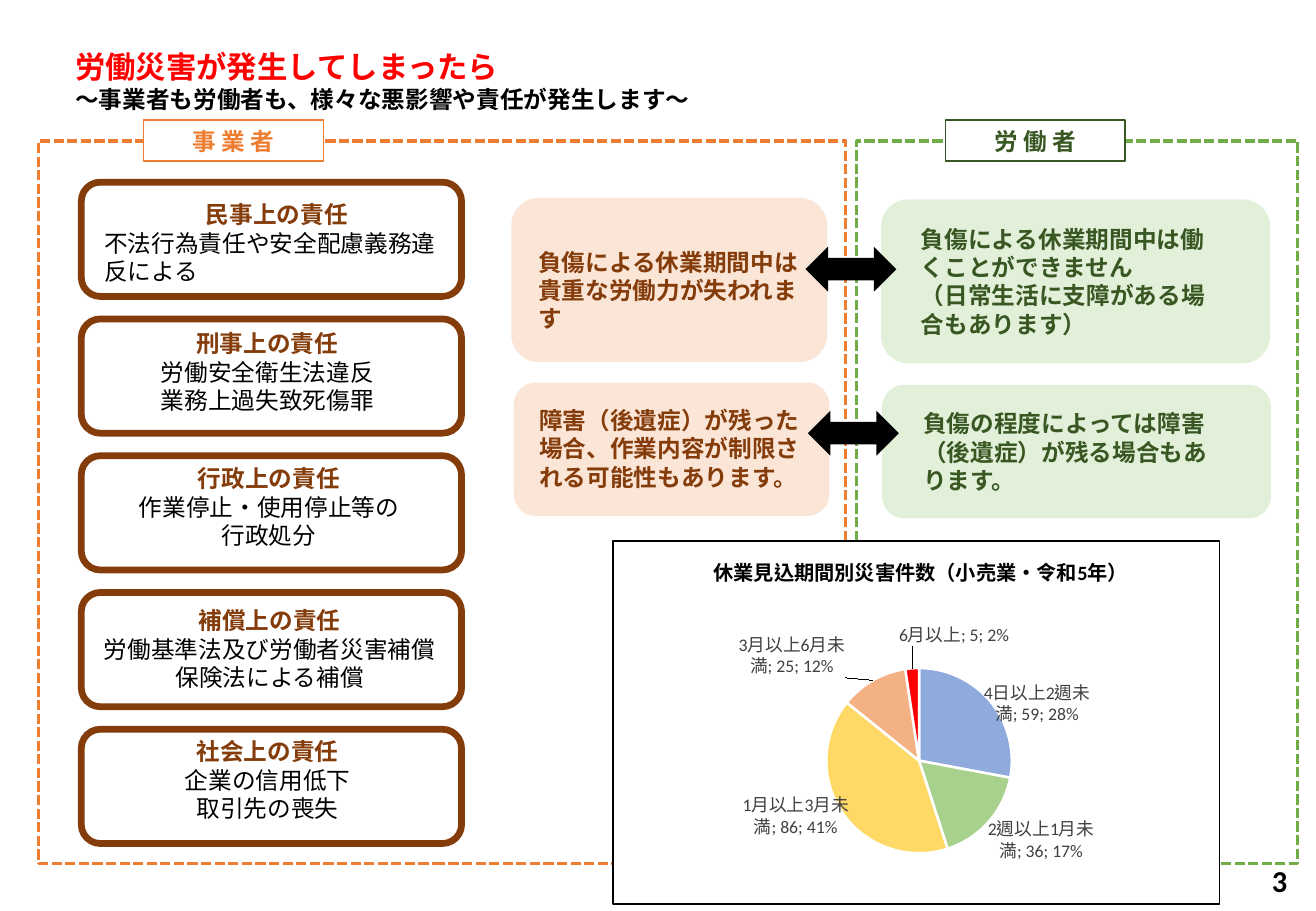
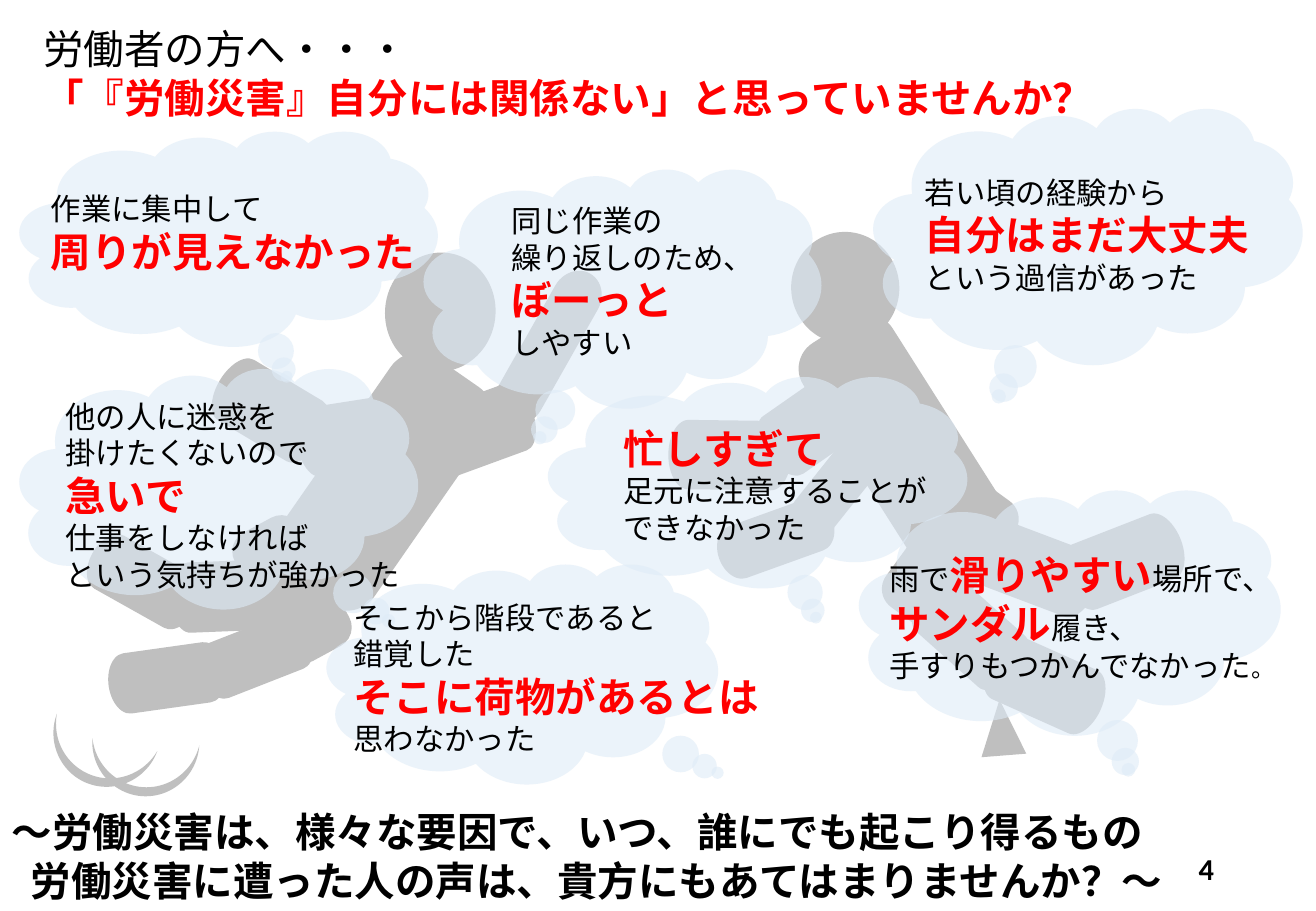
import lxml.etree
import pptx
import pptx.chart.data
import pptx.dml.color
import pptx.enum.chart
import pptx.enum.dml
import pptx.enum.shapes
import pptx.enum.text
import pptx.oxml
import pptx.oxml.ns
import pptx.util

Cm, Pt, RGB = pptx.util.Cm, pptx.util.Pt, pptx.dml.color.RGBColor.from_string
KIND = pptx.enum.shapes.MSO_SHAPE
ALIGN = pptx.enum.text.PP_ALIGN
qn = pptx.oxml.ns.qn


class Theme:
    font = "Calibri"
    black, white, red, grey = "000000", "FFFFFF", "FF0000", "BFBFBF"
    orange, brown, peach = "ED7D31", "843C0B", "FBE5D6"
    green, forest, mint = "70AD47", "385723", "E2F0D9"
    cloud, label = "DEEBF7", "404040"
    slices = ["8FAADC", "A9D18E", "FFD966", "F4B183", red]
    chart_size, label_size, chart_title_size = 10, 10.5, 12
    # Text styles: size, colour, bold
    title = (18, red, True)
    subtitle = (14, black, True)
    employer_label = (14, orange, True)
    employer = (14, brown, True)
    worker = (14, forest, True)
    body = (14, black, False)
    page = (18, black, True)
    lead = (24, black, False)
    shout = (24, red, True)
    voice = (18, black, False)
    closing = (24, black, True)


def add(shapes, kind, box, fill=None, line=None, width=0.75, adj=()):
    """Add a preset shape, or a text box when kind is None; box is in cm."""
    box = [Cm(v) for v in box]
    if kind is None:
        return shapes.add_textbox(*box)
    sp = shapes.add_shape(kind, *box)
    sp.shadow.inherit = False
    for i, value in enumerate(adj):
        sp.adjustments[i] = value
    if fill:
        sp.fill.solid()
        sp.fill.fore_color.rgb = RGB(fill)
    else:
        sp.fill.background()
    if line:
        sp.line.color.rgb = RGB(line)
        sp.line.width = Pt(width)
    else:
        sp.line.fill.background()
    return sp


def write(sp, paras, align=ALIGN.LEFT):
    """Fill sp with paragraphs, each a list of (text, style) runs."""
    tf = sp.text_frame
    tf.word_wrap = True
    for i, runs in enumerate(paras):
        p = tf.add_paragraph() if i else tf.paragraphs[0]
        p.alignment = align
        for text, style in runs:
            r = p.add_run()
            r.text = text
            font = p.font if len(runs) == 1 else r.font
            font.name = Theme.font
            font.size, font.bold = Pt(style[0]), style[2]
            font.color.rgb = RGB(style[1])
    return tf


prs = pptx.Presentation()
prs.slide_width, prs.slide_height = Cm(27.51), Cm(19.05)
slides = [prs.slides.add_slide(prs.slide_layouts[6]) for _ in range(2)]

# Slide 1: consequences for employer and worker
s = slides[0]
for left, width, colour in [(17.91, 9.22, Theme.green), (0.81, 16.87, Theme.orange)]:
    zone = add(s.shapes, KIND.RECTANGLE, (left, 2.95, width, 15.11), line=colour, width=2)
    zone.line.dash_style = pptx.enum.dml.MSO_LINE.SQUARE_DOT

write(add(s.shapes, None, (1.32, 0.89, 24.64, 1.63)), [
    [("労働災害が発生してしまったら", Theme.title)],
    [("～事業者も労働者も、様々な悪影響や責任が発生します～", Theme.subtitle)],
])

for left, text, style in [(3, "事 業 者", Theme.employer_label),
                          (19.76, "労 働 者", Theme.worker)]:
    label = add(s.shapes, KIND.RECTANGLE, (left, 2.51, 3.76, 0.86), Theme.white, style[1])
    write(label, [[(text, style)]], ALIGN.CENTER)

effects = [
    ((18.42, 4.17, 8.13, 3.43), (19, 4.57, 6.5, 2.64), Theme.mint, Theme.worker,
     ["負傷による休業期間中は働くことができません",
      "（日常生活に支障がある場合もあります）"]),
    ((18.44, 8.05, 8.13, 2.79), (19.05, 8.43, 6.5, 2.06), Theme.mint, Theme.worker,
     ["負傷の程度によっては障害（後遺症）が残る場合もあります。"]),
    ((10.69, 4.14, 6.6, 3.43), (11, 5.05, 5.97, 2.06), Theme.peach, Theme.employer,
     ["負傷による休業期間中は貴重な労働力が失われます"]),
    ((10.74, 8, 6.6, 2.79), (11.02, 8.36, 6.32, 2.06), Theme.peach, Theme.employer,
     ["障害（後遺症）が残った場合、作業内容が制限される可能性もあります。"]),
]
for card, box, fill, style, lines in effects:
    add(s.shapes, KIND.ROUNDED_RECTANGLE, card, fill)
    write(add(s.shapes, None, box), [[(line, style)] for line in lines])

for left, top in [(16.84, 5.16), (16.89, 8.59)]:
    add(s.shapes, KIND.LEFT_RIGHT_ARROW, (left, top, 1.9, 0.94), Theme.black)

duties = [
    (1.93, 4.06, 7.72, "民事上の責任", ["不法行為責任や安全配慮義務違反による"]),
    (1.88, 6.76, 7.42, "刑事上の責任", ["労働安全衛生法違反", "業務上過失致死傷罪"]),
    (1.93, 9.58, 7.39, "行政上の責任", ["作業停止・使用停止等の", "行政処分"]),
    (1.88, 12.55, 7.52, "補償上の責任", ["労働基準法及び労働者災害補償保険法による補償"]),
    (1.8, 15.29, 7.59, "社会上の責任", ["企業の信用低下", "取引先の喪失"]),
]
for i, (left, top, width, head, lines) in enumerate(duties):
    add(s.shapes, KIND.ROUNDED_RECTANGLE, (1.7, 3.81 + 2.86 * i, 7.95, 2.39),
        line=Theme.brown, width=4)
    tf = write(add(s.shapes, None, (left, top, width, 2.06)),
               [[(head, Theme.employer)]] + [[(line, Theme.body)] for line in lines],
               ALIGN.CENTER)
    if i == 0:
        tf.paragraphs[1].alignment = ALIGN.LEFT

data = pptx.chart.data.CategoryChartData()
data.categories = ["4日以上2週未満", "2週以上1月未満", "1月以上3月未満", "3月以上6月未満", "6月以上"]
data.add_series("災害件数", [59, 36, 86, 25, 5])
chart = s.shapes.add_chart(pptx.enum.chart.XL_CHART_TYPE.PIE,
                           Cm(12.8), Cm(11.3), Cm(12.7), Cm(7.62), data).chart
chart.has_legend = False
chart.font.name, chart.font.size = Theme.font, Pt(Theme.chart_size)
chart.font.color.rgb = RGB(Theme.black)
chart.has_title = True
p = chart.chart_title.text_frame.paragraphs[0]
p.text = "休業見込期間別災害件数（小売業・令和5年）"
p.font.name, p.font.size, p.font.bold = Theme.font, Pt(Theme.chart_title_size), True
p.font.color.rgb = RGB(Theme.black)

plot = chart.plots[0]
plot.vary_by_categories = True
pie = plot.series[0]
for i, colour in enumerate(Theme.slices):
    slice_format = pie.points[i].format
    slice_format.fill.solid()
    slice_format.fill.fore_color.rgb = RGB(colour)
    slice_format.line.color.rgb = RGB(Theme.white)
    slice_format.line.width = Pt(1.5)

outside = pptx.enum.chart.XL_LABEL_POSITION.OUTSIDE_END
labels = pie.data_labels
labels.show_category_name = labels.show_value = labels.show_percentage = True
moved = [(-0.02, 0.08), (-0.01, -0.02), (0.02, -0.06), (-0.04, 0.01), (0.07, -0.04)]
for item in [labels] + [pie.points[i].data_label for i in range(len(moved))]:
    item.font.name, item.font.size = Theme.font, Pt(Theme.label_size)
    item.font.color.rgb = RGB(Theme.label)
    item.position = outside

# Manual layouts: parent, index of the layout among its children, settings
root = chart.element
layouts = [
    (next(root.iter(qn("c:title"))), 1,
     dict(xMode="edge", yMode="edge", x=0.16, y=0.04)),
    (next(root.iter(qn("c:plotArea"))), 0,
     dict(layoutTarget="inner", xMode="edge", yMode="edge", x=0.35, y=0.35, w=0.31, h=0.51)),
]
for dlbl, (x, y) in zip(root.iter(qn("c:dLbl")), moved):
    for tag in ("c:showCatName", "c:showVal", "c:showPercent"):
        dlbl.find(qn(tag)).set("val", "1")
    layouts.append((dlbl, 1, dict(x=x, y=y)))
for parent, index, settings in layouts:
    for old in parent.findall(qn("c:layout")):
        parent.remove(old)
    layout = lxml.etree.Element(qn("c:layout"))
    manual = lxml.etree.SubElement(layout, qn("c:manualLayout"))
    for tag, value in settings.items():
        lxml.etree.SubElement(manual, qn("c:" + tag)).set("val", str(value))
    parent.insert(index, layout)

root.find(qn("c:chart")).addnext(pptx.oxml.parse_xml(
    f'<c:spPr {pptx.oxml.ns.nsdecls("c", "a")}>'
    f'<a:solidFill><a:srgbClr val="{Theme.white}"/></a:solidFill>'
    f'<a:ln w="9525"><a:solidFill><a:srgbClr val="{Theme.black}"/></a:solidFill></a:ln>'
    '</c:spPr>'))

# Slide 2: voices of workers over two falling figures
s = slides[1]
head, block, limb = KIND.OVAL, KIND.ROUNDED_RECTANGLE, KIND.FLOWCHART_TERMINATOR
figure_adj = {block: [0.287], KIND.MOON: [0.166]}
slipping = [
    (head, 16.54, 4.85, 2.26, 2.34, 355),
    (block, 16.03, 8.28, 5.84, 2.21, 237.6),
    (limb, 22.2, 11.02, 2.57, 1.45, 338.7),
    (limb, 20.55, 13.59, 2.57, 1.45, 204.1),
    (limb, 19, 12.52, 2.57, 1.45, 221.8),
    (limb, 20.4, 11.18, 2.57, 1.45, 200.7),
    (limb, 13.97, 8.79, 2.57, 1.45, 180.7),
    (block, 19.05, 9.96, 1.63, 3.25, 216.1),
    (limb, 14.96, 10.69, 2.51, 1.14, 160.2),
    (limb, 15.82, 8.08, 2.51, 1.47, 325.1),
    (limb, 15.95, 9.25, 3.76, 0.99, 308.5),
    (KIND.ISOSCELES_TRIANGLE, 20.47, 14.63, 0.94, 1.17, 355.5),
]
tripping = [
    (head, 8.05, 5.28, 2.31, 2.49, 7),
    (block, 5.23, 8.84, 5.54, 2.46, 304.8),
    (limb, 6.2, 8.38, 2.46, 1.47, 351.1),
    (limb, 4.42, 7.85, 2.46, 1.47, 210.9),
    (limb, 9.68, 6.76, 3.56, 1.02, 299.5),
    (limb, 8.74, 8.28, 2.46, 1.47, 159.9),
    (limb, 1.78, 11.53, 2.46, 1.27, 29.3),
    (block, 5.33, 10.8, 1.55, 3.05, 331.6),
    (limb, 2.26, 13.54, 2.46, 1.27, 352),
    (limb, 4.11, 13.11, 2.46, 1.22, 158.6),
    (limb, 3.56, 11.73, 2.46, 1.47, 357.7),
    (KIND.MOON, 1.47, 14.73, 1.14, 2.24, 290.4),
    (KIND.MOON, 2.44, 14.96, 1.14, 2.24, 274),
]
for figure in (slipping, tripping):
    group = s.shapes.add_group_shape()
    for kind, *box, angle in figure:
        part = add(group.shapes, kind, box, Theme.grey, adj=figure_adj.get(kind, ()))
        part.rotation = angle

write(add(s.shapes, None, (0.66, 0.38, 26.54, 2.31)), [
    [("労働者の方へ・・・", Theme.lead)],
    [("「『労働災害』自分には関係ない」と思っていませんか？", Theme.shout)],
])

voice, shout = Theme.voice, Theme.shout
below, left_below = (0.139, 0.642), (-0.208, 0.625)
clouds = [
    ((0.41, 2.74, 8.74, 4.5), below, (0.81, 3.86, 8.69, 2.06),
     [[("作業に集中して", voice)], [("周りが見えなかった", shout)]]),
    ((8.86, 3.53, 8.31, 5), left_below, (10.44, 4.11, 7.32, 3.58),
     [[("同じ作業の", voice)], [("繰り返しのため、", voice)],
      [("ぼーっと", shout)], [("しやすい", voice)]]),
    ((18.26, 2.26, 8.97, 5.36), left_below, (19.08, 3.51, 7.65, 2.82),
     [[("若い頃の経験から", voice)], [("自分はまだ大丈夫", shout)],
      [("という過信があった", voice)]]),
    ((0.41, 7.7, 8.33, 5.03), (0.426, 0.55), (1.12, 8.2, 8.31, 4.37),
     [[("他の人に迷惑を", voice)], [("掛けたくないので", voice)], [("急いで", shout)],
      [("仕事をしなければ", voice)], [("という気持ちが強かった", voice)]]),
    ((11.46, 7.87, 8.76, 4.42), below, (12.78, 8.74, 7.37, 2.82),
     [[("忙しすぎて", shout)], [("足元に注意することが", voice)],
      [("できなかった", voice)]]),
    ((6.83, 11.79, 8.18, 4.6), (0.499, 0.45), (7.14, 12.4, 9.32, 3.58),
     [[("そこから階段であると", voice)], [("錯覚した", voice)],
      [("そこに荷物があるとは", shout)], [("思わなかった", voice)]]),
    ((17.96, 10.24, 8.81, 5.13), below, (18.34, 11.38, 8.86, 3.07),
     [[("雨で", voice), ("滑りやすい", shout), ("場所で、", voice)],
      [("サンダル", shout), ("履き、", voice)],
      [("手すりもつかんでなかった", voice), ("。", Theme.body)]]),
]
for box, tail, text_box, paras in clouds:
    cloud = add(s.shapes, KIND.CLOUD_CALLOUT, box, Theme.cloud, adj=tail)
    colour = next(cloud.element.iter(qn("a:srgbClr")))
    lxml.etree.SubElement(colour, qn("a:alpha")).set("val", "60000")
    write(add(s.shapes, None, text_box), paras)

tf = write(add(s.shapes, None, (0, 16.76, 24.54, 2.31)), [
    [("～労働災害は、様々な要因で、いつ、誰にでも起こり得るもの", Theme.closing)],
    [("労働災害に遭った人の声は、貴方にもあてはまりませんか？～", Theme.closing)],
])
tf.paragraphs[1].alignment = ALIGN.RIGHT

for s, number, left, top in [(slides[0], "3", 20.96, 17.91), (slides[1], "4", 19.43, 17.65)]:
    tf = write(add(s.shapes, None, (left, top, 6.2, 1.02)), [[(number, Theme.page)]], ALIGN.RIGHT)
    tf.vertical_anchor = pptx.enum.text.MSO_ANCHOR.MIDDLE

# Japanese characters take the same font as Latin ones
for tree in [root] + [s.element for s in slides]:
    for latin in list(tree.iter(qn("a:latin"))):
        east_asian = lxml.etree.Element(qn("a:ea"))
        east_asian.set("typeface", Theme.font)
        latin.addnext(east_asian)

prs.save("out.pptx")
